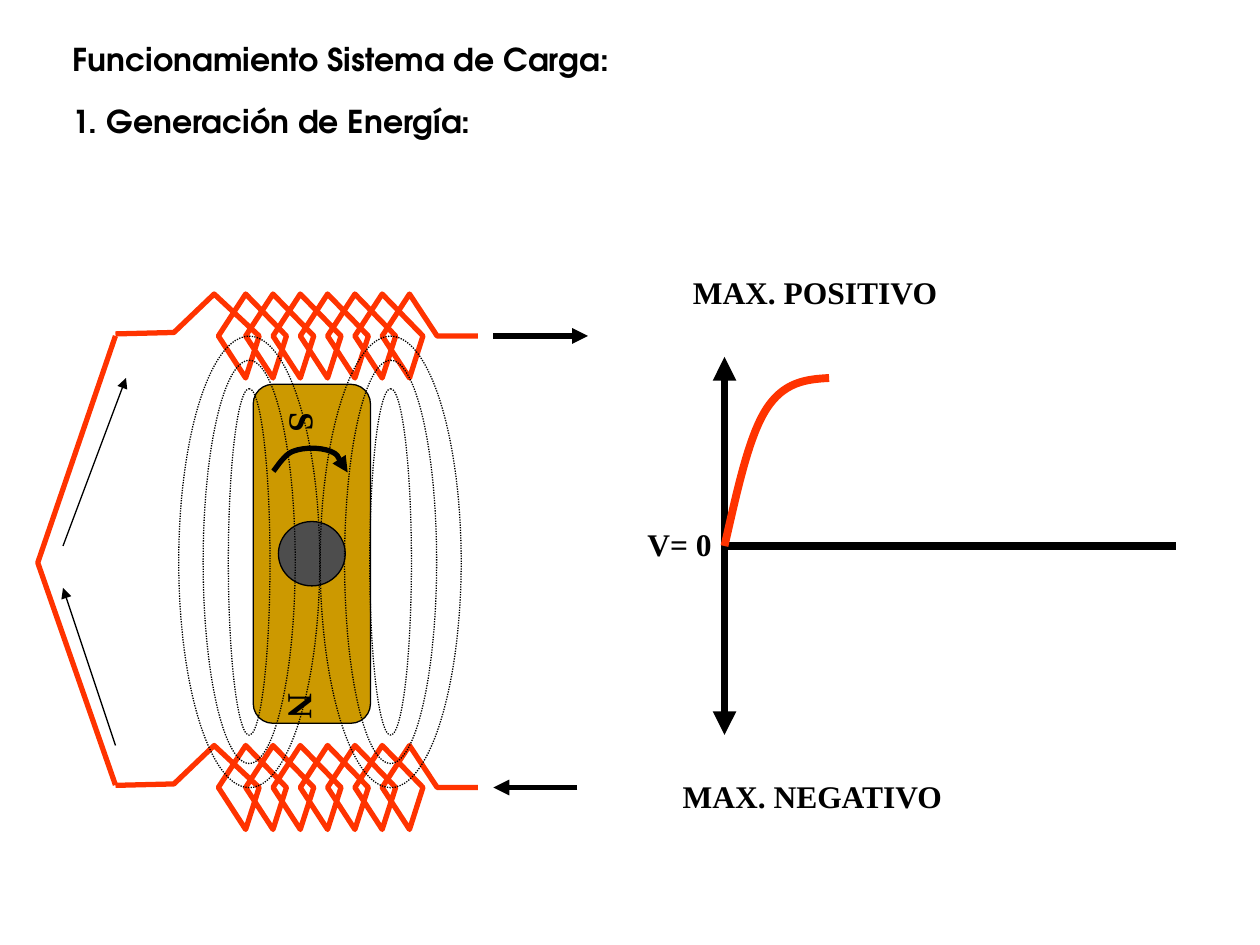
from lxml import etree
from pptx import Presentation
from pptx.dml.color import RGBColor
from pptx.enum import dml, shapes, text as txt
from pptx.oxml import ns
from pptx.util import Pt

COLORS = {"ink": "000000", "coil": "FF3300", "magnet": "CC9900", "shaft": "4D4D4D"}
HEADING, LABEL = "TeX Gyre Adventor", "Times New Roman"

deck = Presentation()
deck.slide_width, deck.slide_height = Pt(720), Pt(540)
slide = deck.slides.add_slide(deck.slide_layouts[5])
parts = slide.shapes
ink, coil_red, magnet_gold, shaft_grey = (RGBColor.from_string(c) for c in COLORS.values())


def write(words, box, font=LABEL, size=18, rotation=0, holder=None):
    box = [Pt(v) for v in box]
    holder = holder or parts.add_textbox(*box)
    holder.left, holder.top, holder.width, holder.height = box
    holder.rotation = rotation
    frame = holder.text_frame
    frame.text = words
    frame.word_wrap = False
    frame.auto_size = txt.MSO_AUTO_SIZE.SHAPE_TO_FIT_TEXT
    frame.vertical_anchor = txt.MSO_ANCHOR.TOP
    line = frame.paragraphs[0]
    line.alignment = txt.PP_ALIGN.LEFT
    line.font.name, line.font.size, line.font.bold = font, Pt(size), True
    line.font.color.rgb = ink


def trace(points, color, width, curved=False):
    corners = [(Pt(x), Pt(y)) for x, y in points]
    builder = parts.build_freeform(*corners[0])
    builder.add_line_segments(corners[1:], close=False)
    outline = builder.convert_to_shape()
    outline.shadow.inherit = False
    outline.fill.background()
    outline.line.color.rgb, outline.line.width = color, Pt(width)
    if curved:
        path = outline._element.xpath(".//a:path")[0]
        segments = path.findall(ns.qn("a:lnTo"))
        for start in range(0, len(segments), 3):
            bezier = etree.SubElement(path, ns.qn("a:cubicBezTo"))
            for segment in segments[start:start + 3]:
                bezier.append(segment[0])
                path.remove(segment)
    return outline


write("Funcionamiento Sistema de Carga:", (34.5, 19.5, 322, 29), HEADING, holder=parts.title)
write("1. Generación de Energía:", (34.5, 54.7, 245.5, 29), HEADING)

arrows = []
for start, end, width, heads in (
    ((414, 312), (672, 312), 4.5, ()),
    ((414, 204), (414, 420), 4.5, ("headEnd", "tailEnd")),
    ((36, 312), (72, 216), 0.75, ("tailEnd",)),
    ((66, 426), (36, 336), 0.75, ("tailEnd",)),
    ((282, 192), (336, 192), 3, ("tailEnd",)),
    ((330, 450), (282, 450), 3, ("tailEnd",)),
):
    wire = parts.add_connector(shapes.MSO_CONNECTOR.STRAIGHT, *(Pt(v) for v in start + end))
    wire.line.color.rgb, wire.line.width = ink, Pt(width)
    etree.SubElement(wire._element.spPr, ns.qn("a:effectLst"))
    arrows.append((wire, heads))

trace([(414, 312), (421.2, 280.8), (427.7, 249.8), (437.8, 234),
       (447.8, 218.2), (460.8, 216.7), (473.8, 216)], coil_red, 4.5, curved=True)

for middle in (192, 450):
    winding = [(273, middle), (249.8, middle)]
    for turn in range(7):
        x = 234 - 15.6 * turn
        winding += [(x, middle - 24), (x - 15.6, middle), (x, middle + 24), (x + 7.7, middle)]
    winding += [(122.4, middle - 24), (99.4, middle - 2), (66, middle - 1.2)]
    trace(winding, coil_red, 3)
trace([(66, 192), (21.6, 321.6), (66, 448.6)], coil_red, 3)

for kind, box, color in (
    (shapes.MSO_SHAPE.ROUNDED_RECTANGLE, (144.7, 219.6, 67, 193.7), magnet_gold),
    (shapes.MSO_SHAPE.OVAL, (159.1, 298, 38.2, 36.8), shaft_grey),
):
    rotor = parts.add_shape(kind, *(Pt(v) for v in box))
    rotor.rotation = 180
    rotor.shadow.inherit = False
    rotor.fill.solid()
    rotor.fill.fore_color.rgb = color
    rotor.line.color.rgb, rotor.line.width = ink, Pt(0.75)

write("S", (160.6, 226.1, 25.9, 31), size=20, rotation=90)
write("N", (158.4, 388.1, 28.8, 31), size=20, rotation=90)

for center in (223.2, 142.4):
    for length, breadth in ((258, 80.6), (230.4, 52.6), (198, 23.8)):
        field = parts.add_shape(shapes.MSO_SHAPE.OVAL, Pt(center - length / 2),
                                Pt(321.1 - breadth / 2), Pt(length), Pt(breadth))
        field.rotation = 90
        field.shadow.inherit = False
        field.fill.background()
        field.line.color.rgb, field.line.width = ink, Pt(0.75)
        field.line.dash_style = dml.MSO_LINE.ROUND_DOT

write("MAX. POSITIVO", (388.8, 152.6, 154.8, 29))
write("MAX. NEGATIVO", (383, 440.6, 164.2, 29))
write("V= 0", (362.9, 296.6, 51.1, 29))

spin = trace([(156.2, 269.3), (157.7, 267.8), (162.7, 259.2), (167.8, 257.8),
              (173.5, 255.6), (182.9, 255.6), (188.6, 257.8),
              (193.7, 259.9), (196.6, 267.8), (198.7, 270)], ink, 3, curved=True)
arrows.append((spin, ("tailEnd",)))

for arrow, heads in arrows:
    for head in heads:
        etree.SubElement(arrow.line._get_or_add_ln(), ns.qn("a:" + head), type="triangle")

deck.save("out.pptx")
